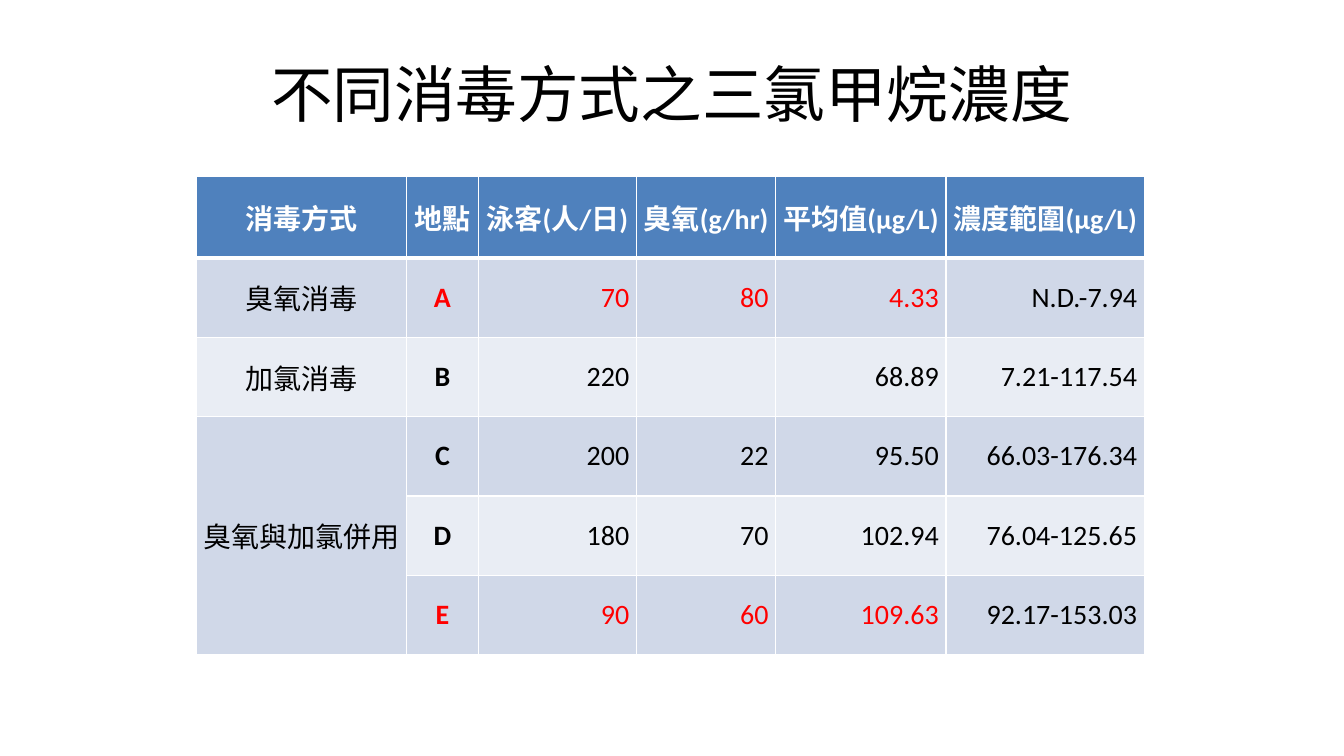
from lxml import etree
from pptx import Presentation
from pptx.dml.color import RGBColor
from pptx.enum.text import MSO_ANCHOR, PP_ALIGN
from pptx.oxml.ns import qn
from pptx.util import Cm, Pt

CENTER, RIGHT = PP_ALIGN.CENTER, PP_ALIGN.RIGHT
MIDDLE = MSO_ANCHOR.MIDDLE

BLACK = RGBColor(0x00, 0x00, 0x00)
WHITE = RGBColor(0xFF, 0xFF, 0xFF)
RED = RGBColor(0xFF, 0x00, 0x00)
HEADER_BLUE = RGBColor(0x4F, 0x81, 0xBD)
BAND_DARK = RGBColor(0xD0, 0xD8, 0xE8)
BAND_LIGHT = RGBColor(0xE9, 0xED, 0xF4)

FONT = "Calibri"
TITLE = "不同消毒方式之三氯甲烷濃度"
HEADER = ["消毒方式", "地點", "泳客(人/日)", "臭氧(g/hr)", "平均值(μg/L)", "濃度範圍(μg/L)"]
POOLS = [
    ["臭氧消毒", "A", "70", "80", "4.33", "N.D.-7.94"],
    ["加氯消毒", "B", "220", "", "68.89", "7.21-117.54"],
    ["臭氧與加氯併用", "C", "200", "22", "95.50", "66.03-176.34"],
    ["", "D", "180", "70", "102.94", "76.04-125.65"],
    ["", "E", "90", "60", "109.63", "92.17-153.03"],
]
HIGHLIGHTED_SITES = {"A", "E"}
HIGHLIGHTED_COLUMNS = range(1, 5)
SITE_COLUMN = 1
COMBINED_ROWS = (3, 5)
COLUMN_WIDTHS = [5.31, 1.8, 3.99, 3.51, 4.29, 5.0]  # cm


def format_paragraph(paragraph, size, color, alignment, bold=False):
    paragraph.alignment = alignment
    font = paragraph.font
    font.name, font.size, font.bold = FONT, Pt(size), bold
    font.color.rgb = color


def add_borders(cell, top, bottom):
    """White cell borders; they must come before the fill in the cell."""
    properties = cell._tc.get_or_add_tcPr()
    for side, width in (("L", 1), ("R", 1), ("T", top), ("B", bottom)):
        line = etree.SubElement(properties, qn(f"a:ln{side}"), w=str(Pt(width)))
        fill = etree.SubElement(line, qn("a:solidFill"))
        etree.SubElement(fill, qn("a:srgbClr"), val=str(WHITE))


def format_cell(cell, text, row, column, site):
    is_header = row == 0
    add_borders(cell, top=3 if row == 1 else 1, bottom=3 if is_header else 1)
    cell.fill.solid()
    cell.vertical_anchor = MIDDLE
    cell.margin_left = cell.margin_right = Cm(0.18)
    cell.margin_top = cell.margin_bottom = 0
    cell.text = text

    if is_header:
        fill, color = HEADER_BLUE, WHITE
    else:
        fill = BAND_DARK if row % 2 else BAND_LIGHT
        highlighted = site in HIGHLIGHTED_SITES and column in HIGHLIGHTED_COLUMNS
        color = RED if highlighted else BLACK
    cell.fill.fore_color.rgb = fill
    alignment = CENTER if is_header or column <= SITE_COLUMN else RIGHT
    format_paragraph(cell.text_frame.paragraphs[0], 20, color, alignment,
                     bold=is_header or column == SITE_COLUMN)


def add_title(slide, left, top, width, height):
    title = slide.shapes.title
    title.left, title.top, title.width, title.height = left, top, width, height
    title.text_frame.text = TITLE
    title.text_frame.vertical_anchor = MIDDLE
    format_paragraph(title.text_frame.paragraphs[0], 44, BLACK, CENTER)


def add_concentration_table(slide, left, top, width, height):
    rows = [HEADER, *POOLS]
    table = slide.shapes.add_table(
        len(rows), len(HEADER), left, top, width, height).table
    # Column widths share out the width of the box
    for column, column_width in zip(table.columns, COLUMN_WIDTHS):
        column.width = int(width * column_width / sum(COLUMN_WIDTHS))
    for row, texts in enumerate(rows):
        for column, text in enumerate(texts):
            format_cell(table.cell(row, column), text, row, column, texts[SITE_COLUMN])
    # One disinfection method covers three sites
    first, last = COMBINED_ROWS
    table.cell(first, 0).merge(table.cell(last, 0))


def main():
    presentation = Presentation()
    presentation.slide_width, presentation.slide_height = Cm(33.87), Cm(19.05)
    slide = presentation.slides.add_slide(presentation.slide_layouts[5])
    add_title(slide, Cm(1.69), Cm(0.76), Cm(30.48), Cm(3.18))
    add_concentration_table(slide, Cm(4.94), Cm(4.45), Cm(23.9), Cm(12.0))
    presentation.save("out.pptx")


if __name__ == "__main__":
    main()
